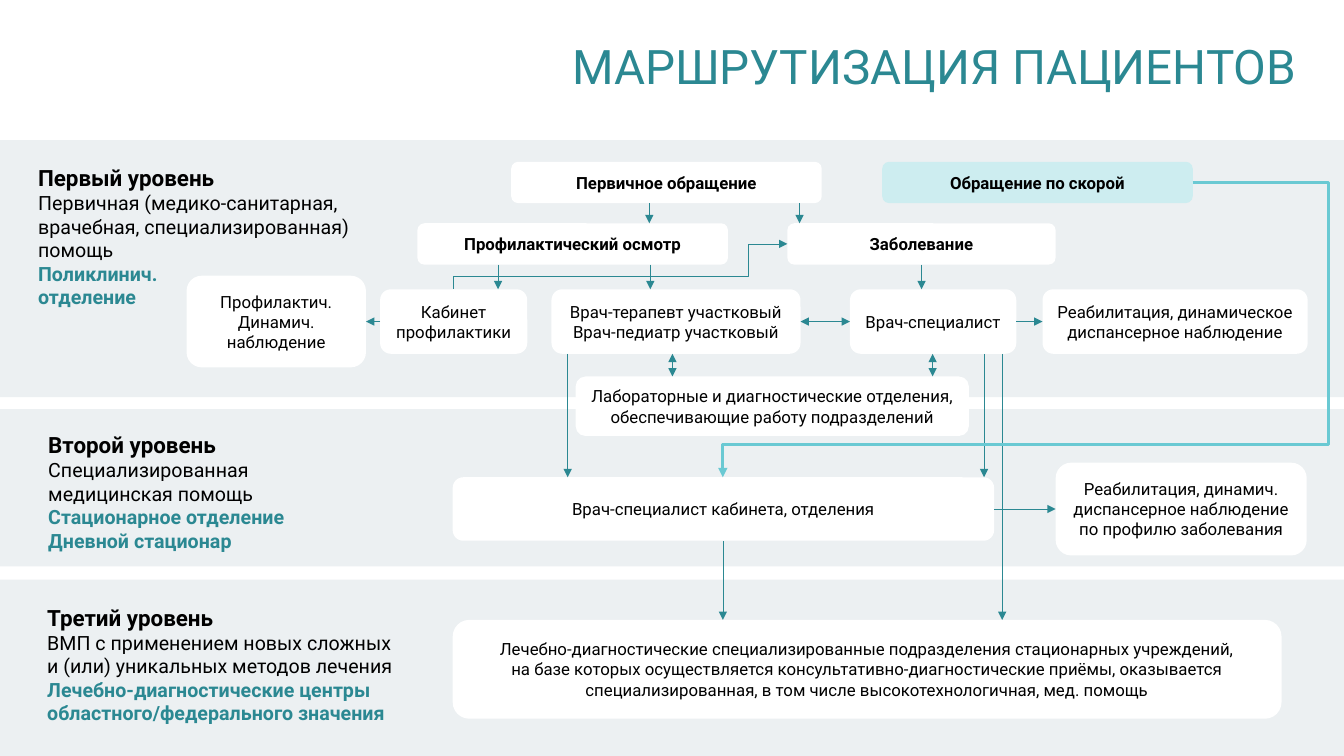
from lxml import etree
from pptx import Presentation
from pptx.dml.color import RGBColor
from pptx.enum.shapes import MSO_CONNECTOR, MSO_SHAPE
from pptx.enum.text import MSO_ANCHOR, PP_ALIGN
from pptx.oxml.ns import qn
from pptx.util import Inches, Pt

RECT, ROUND = MSO_SHAPE.RECTANGLE, MSO_SHAPE.ROUNDED_RECTANGLE
STRAIGHT, ELBOW = MSO_CONNECTOR.STRAIGHT, MSO_CONNECTOR.ELBOW
MIDDLE, CENTER, RIGHT = MSO_ANCHOR.MIDDLE, PP_ALIGN.CENTER, PP_ALIGN.RIGHT

WIDE, HIGH = 13.33, 7.5
FONT = "Roboto"
TEAL, AQUA, PALE, GREY, WHITE, BLACK = "2B8892", "6AC9D3", "CDEDF0", "ECF0F2", "FFFFFF", "000000"
TITLE = "МАРШРУТИЗАЦИЯ ПАЦИЕНТОВ"

# Band top, band height, label left, label top, label width, heading, care, units
LEVELS = [
    (1.39, 2.55, 0.28, 1.58, 3.73, "Первый уровень",
     "Первичная (медико-санитарная, врачебная, специализированная) помощь",
     ["Поликлинич.", "отделение"]),
    (4.06, 1.56, 0.38, 4.23, 3.32, "Второй уровень",
     "Специализированная медицинская помощь",
     ["Стационарное отделение", "Дневной стационар"]),
    (5.75, 1.75, 0.37, 5.94, 3.76, "Третий уровень",
     "ВМП с применением новых сложных\nи (или) уникальных методов лечения",
     ["Лечебно-диагностические центры областного/федерального значения"]),
]

# Middle line of each row of boxes
ROWS = {"call": 1.81, "reason": 2.42, "doctor": 3.19, "lab": 4.03, "ward": 5.05, "centre": 6.64}
BOLD = ("call", "reason")

# Name: row, left, width, height, text
BOXES = {
    "centre": ("centre", 4.49, 8.22, 0.98,
               "Лечебно-диагностические специализированные подразделения стационарных учреждений,\n"
               "на базе которых осуществляется консультативно-диагностические приёмы, оказывается "
               "специализированная, в том числе высокотехнологичная, мед. помощь"),
    "ward": ("ward", 4.49, 5.37, 0.63, "Врач-специалист кабинета, отделения"),
    "after": ("ward", 10.47, 2.49, 0.92,
              "Реабилитация, динамич. диспансерное наблюдение\nпо профилю заболевания"),
    "lab": ("lab", 5.71, 3.9, 0.59,
            "Лабораторные и диагностические отделения, обеспечивающие работу подразделений"),
    "expert": ("doctor", 8.43, 1.65, 0.64, "Врач-специалист"),
    "rehab": ("doctor", 10.34, 2.63, 0.64, "Реабилитация, динамическое диспансерное наблюдение"),
    "local": ("doctor", 5.47, 2.47, 0.64, "Врач-терапевт участковый\nВрач-педиатр участковый"),
    "office": ("doctor", 3.77, 1.46, 0.64, "Кабинет профилактики"),
    "watch": ("doctor", 1.85, 1.78, 0.91, "Профилактич. Динамич. наблюдение"),
    "check": ("reason", 4.14, 3.08, 0.41, "Профилактический осмотр"),
    "illness": ("reason", 7.81, 2.66, 0.41, "Заболевание"),
    "first": ("call", 5.07, 3.08, 0.41, "Первичное обращение"),
    "urgent": ("call", 8.75, 3.08, 0.41, "Обращение по скорой"),
}

# From, to, x of the arrow, both ends pointed
DOWN = [
    ("first", "check", 6.44, False), ("first", "illness", 7.93, False),
    ("check", "office", 4.94, False), ("check", "local", 6.45, False),
    ("illness", "expert", 9.14, False), ("local", "lab", 6.67, True),
    ("expert", "lab", 9.25, True), ("local", "ward", 5.63, False),
    ("expert", "ward", 9.76, False), ("expert", "centre", 9.94, False),
    ("ward", "centre", 7.17, False),
]
ACROSS = [
    ("office", "watch", False), ("local", "expert", True),
    ("expert", "rehab", False), ("ward", "after", False),
]


def color(code):
    return RGBColor.from_string(code)


def put(para, text, size, tint=BLACK, bold=False):
    """Add text to a paragraph, with a line break at each newline."""
    for i, line in enumerate(text.split("\n")):
        if i:
            para.add_line_break()
        run = para.add_run()
        run.text = line
        look = {"name": FONT, "size": Pt(size), "bold": bold}
        for key, value in look.items():
            setattr(run.font, key, value)
        run.font.color.rgb = color(tint)


def block(kind, left, top, width, height, fill):
    shape = slide.shapes.add_shape(kind, *map(Inches, (left, top, width, height)))
    shape.shadow.inherit = False
    shape.fill.solid()
    shape.fill.fore_color.rgb = color(fill)
    shape.line.fill.background()
    return shape


def link(start, end, tint=TEAL, weight=0.5, ends=("tailEnd",), bend=None, adjust=()):
    """Draw a connector; bend names an elbow preset and adjust its turns."""
    wire = slide.shapes.add_connector(ELBOW if bend else STRAIGHT, *map(Inches, start + end))
    wire.line.color.rgb = color(tint)
    wire.line.width = Pt(weight)
    props = wire._element.spPr
    for tip in ends:
        etree.SubElement(props.find(qn("a:ln")), qn("a:" + tip), type="triangle")
    etree.SubElement(props, qn("a:effectLst"))
    if bend:
        shape = props.find(qn("a:prstGeom"))
        shape.set("prst", bend)
        turns = shape.find(qn("a:avLst"))
        for i, share in enumerate(adjust, 1):
            etree.SubElement(turns, qn("a:gd"), name=f"adj{i}", fmla=f"val {round(share * 100000)}")


def edges(name):
    """Left, top, right and bottom of a box."""
    row, left, width, height, _ = BOXES[name]
    return left, ROWS[row] - height / 2, left + width, ROWS[row] + height / 2


def tips(both):
    return ("headEnd", "tailEnd") if both else ("tailEnd",)


deck = Presentation()
deck.slide_width, deck.slide_height = Inches(WIDE), Inches(HIGH)
slide = deck.slides.add_slide(deck.slide_layouts[5])

title = slide.shapes.title
spot = {"left": 0.36, "top": 0, "width": 12.6, "height": 1.38}
for key, value in spot.items():
    setattr(title, key, Inches(value))
title.text_frame.vertical_anchor = MIDDLE
head = title.text_frame.paragraphs[0]
head.alignment, head.line_spacing = RIGHT, 0.9
put(head, TITLE, 34, TEAL)

for top, height, *_ in LEVELS:
    block(RECT, 0, top, WIDE, height, GREY)

for _, _, left, top, width, name, care, units in LEVELS:
    frame = slide.shapes.add_textbox(*map(Inches, (left, top, width, 1.31))).text_frame
    frame.word_wrap = True
    put(frame.paragraphs[0], name, 16, bold=True)
    para = frame.add_paragraph()
    put(para, care, 14)
    para.add_line_break()
    put(para, "\n".join(units), 14, TEAL, True)

for name, (row, left, width, height, text) in BOXES.items():
    fill = PALE if name == "urgent" else WHITE
    frame = block(ROUND, left, edges(name)[1], width, height, fill).text_frame
    frame.word_wrap, frame.vertical_anchor = True, MIDDLE
    frame.paragraphs[0].alignment = CENTER
    put(frame.paragraphs[0], text, 12, bold=row in BOLD)

for upper, lower, x, both in DOWN:
    link((x, edges(upper)[3]), (x, edges(lower)[1]), ends=tips(both))

for source, target, both in ACROSS:
    a, b, y = edges(source), edges(target), ROWS[BOXES[source][0]]
    start, end = (a[2], b[0]) if a[0] < b[0] else (a[0], b[2])
    link((start, y), (end, y), ends=tips(both))

joint = (7.04, 2.74)
link(joint, (4.5, edges("office")[1]), ends=(), bend="bentConnector2")
link(joint, (edges("illness")[0], ROWS["reason"]), bend="bentConnector3", adjust=(0.5,))
link((edges("urgent")[2], ROWS["call"]), (7.17, edges("ward")[1]), AQUA, 2.25,
     bend="bentConnector4", adjust=(-0.29, 0.89))

deck.save("out.pptx")
